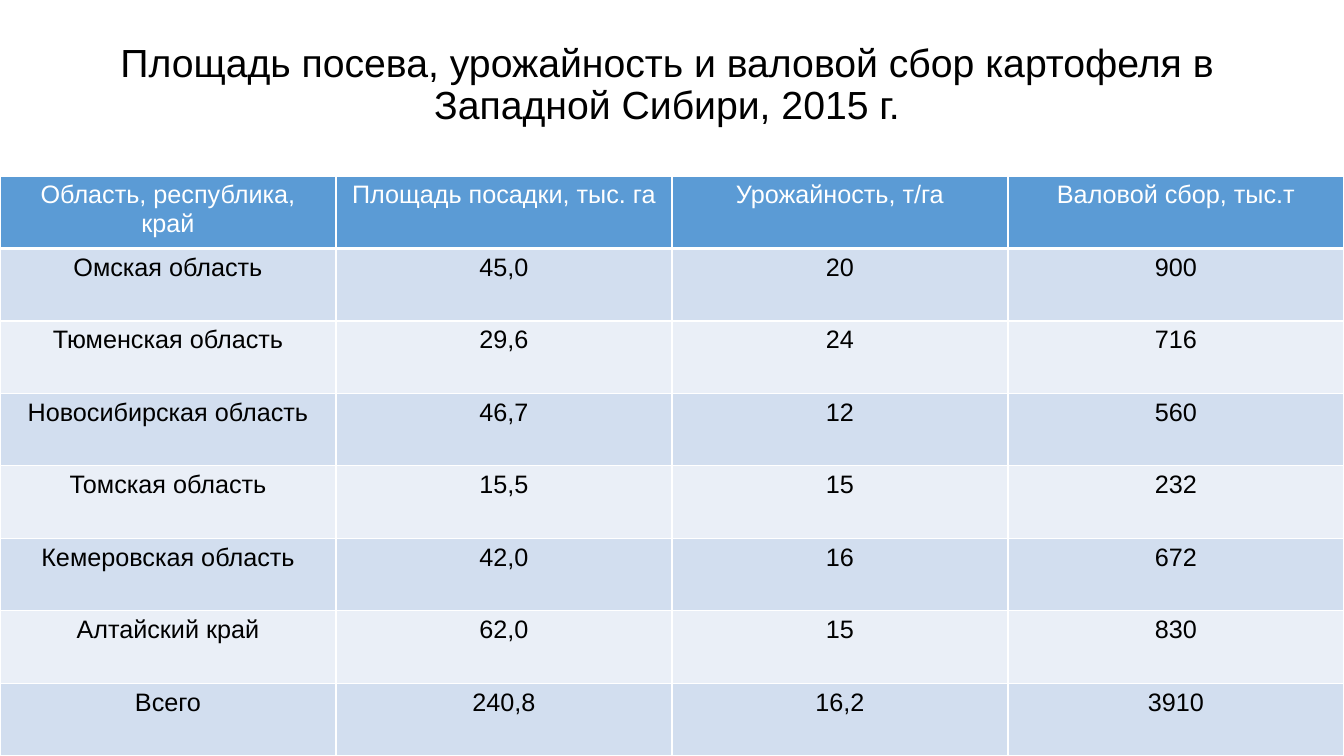
"""Build a slide with a table of potato area, yield and harvest in Western Siberia."""
import pptx
import pptx.dml.color
import pptx.enum.text
import pptx.oxml
import pptx.oxml.ns
import pptx.util

PX = 914400 / 100.8
W, H = 1344, 756
TABLE_TOP = 176
COLORS = {"text": "000000", "white": "FFFFFF", "header": "5B9BD5",
          "odd": "D2DEEF", "even": "EAEFF7"}
ROWS = [
    ("Область, республика, край", "Площадь посадки, тыс. га", "Урожайность, т/га", "Валовой сбор, тыс.т"),
    ("Омская область", "45,0", "20", "900"),
    ("Тюменская область", "29,6", "24", "716"),
    ("Новосибирская область", "46,7", "12", "560"),
    ("Томская область", "15,5", "15", "232"),
    ("Кемеровская область", "42,0", "16", "672"),
    ("Алтайский край", "62,0", "15", "830"),
    ("Всего", "240,8", "16,2", "3910"),
]


def px(n):
    return pptx.util.Emu(round(n * PX))


def write(tf, text, size=18, color="text", spacing=1.0):
    p = tf.paragraphs[0]
    p.alignment = pptx.enum.text.PP_ALIGN.CENTER
    p.line_spacing = spacing
    r = p.add_run()
    r.text = text
    r.font.name = "Arial"
    r.font.size = pptx.util.Pt(size)
    r.font.bold = False
    r.font.color.rgb = pptx.dml.color.RGBColor.from_string(COLORS[color])


prs = pptx.Presentation()
prs.slide_width, prs.slide_height = px(W), px(H)
s = prs.slides.add_slide(prs.slide_layouts[5])

title = s.shapes.title
title.left, title.top, title.width, title.height = px(62), px(23), px(1210), px(126)
tf = title.text_frame
tf.word_wrap = True
tf.auto_size = pptx.enum.text.MSO_AUTO_SIZE.NONE
tf.vertical_anchor = pptx.enum.text.MSO_ANCHOR.MIDDLE
write(tf, "Площадь посева, урожайность и валовой сбор картофеля в Западной Сибири, 2015 г.",
      size=28, spacing=0.9)

frame = s.shapes.add_table(len(ROWS), len(ROWS[0]), px(0), px(TABLE_TOP), px(W), px(H - TABLE_TOP))
table = frame.table
for i, row in enumerate(ROWS):
    fill = "header" if i == 0 else "odd" if i % 2 else "even"
    for j, text in enumerate(row):
        cell = table.cell(i, j)
        cell.margin_left = cell.margin_right = px(13)
        cell.margin_top = cell.margin_bottom = px(5)
        write(cell.text_frame, text, color="text" if i else "white")
        tcPr = cell._tc.get_or_add_tcPr()
        for side in "LRTB":
            width = pptx.util.Pt(3 if i == 0 and side == "B" else 1)
            tcPr.append(pptx.oxml.parse_xml(
                f'<a:ln{side} {pptx.oxml.ns.nsdecls("a")} w="{width}"><a:solidFill>'
                f'<a:srgbClr val="{COLORS["white"]}"/></a:solidFill></a:ln{side}>'))
        cell.fill.solid()
        cell.fill.fore_color.rgb = pptx.dml.color.RGBColor.from_string(COLORS[fill])

prs.save("out.pptx")
